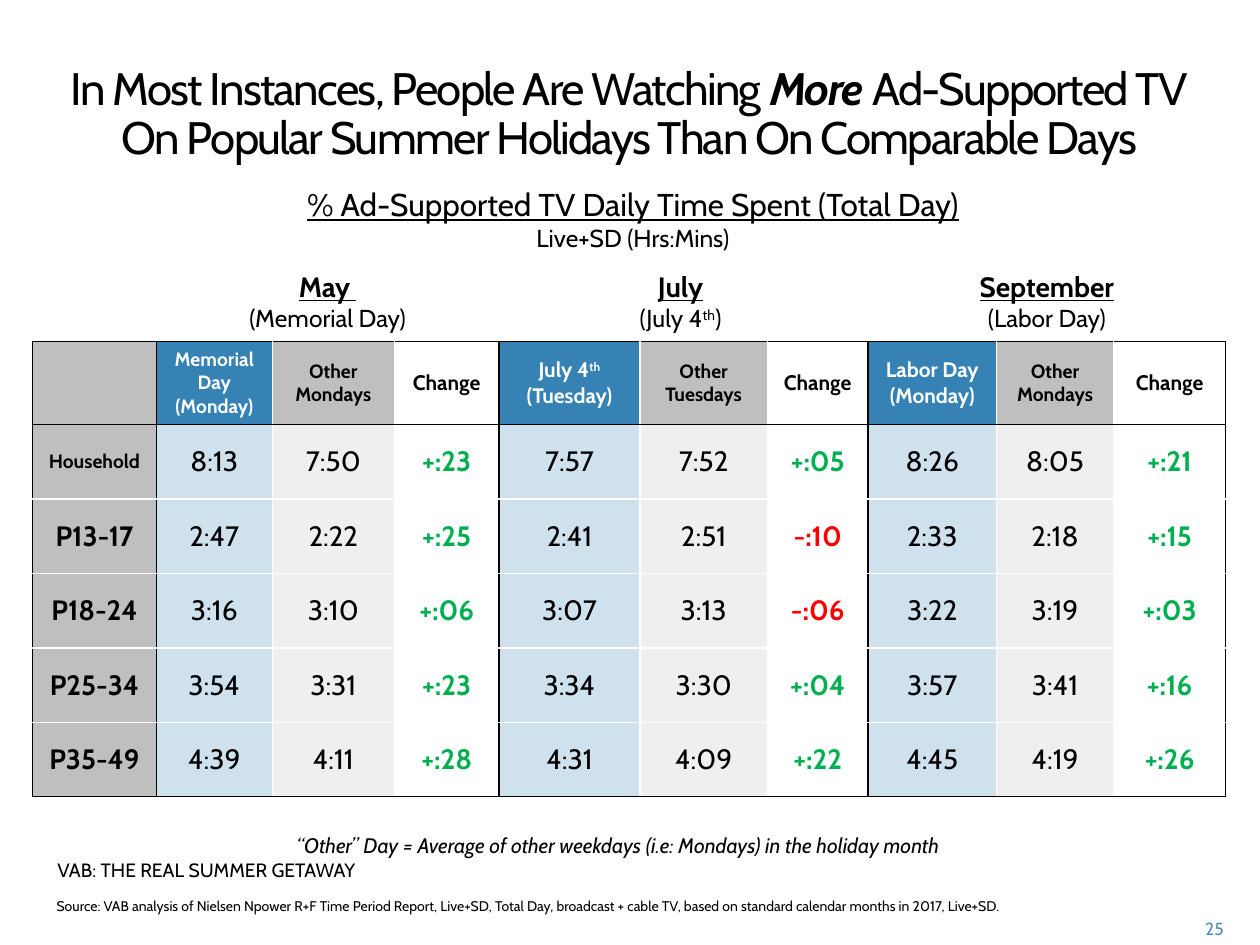
from dataclasses import dataclass

from lxml import etree
from pptx import Presentation
from pptx import util as u
from pptx.dml.color import RGBColor
from pptx.enum import text as t
from pptx.oxml.ns import qn

FONT = "Cabin"
BLACK = RGBColor(0x00, 0x00, 0x00)
WHITE = RGBColor(0xFF, 0xFF, 0xFF)
GRAY = RGBColor(0xBF, 0xBF, 0xBF)
BLUE = RGBColor(0x36, 0x82, 0xB4)
PAGE_BLUE = RGBColor(0x50, 0x8A, 0xBA)
GREEN = RGBColor(0x00, 0xB0, 0x50)
RED = RGBColor(0xFF, 0x00, 0x00)
CENTER = t.PP_ALIGN.CENTER
TINT = 24  # opacity of the value columns, percent


@dataclass
class Span:
    text: str
    size: float
    bold: bool = False
    italic: bool = False
    underline: bool = False
    color: RGBColor = BLACK
    raised: bool = False
    spacing: float = 0


@dataclass
class Block:
    left: float
    top: float
    width: float
    height: float
    paras: list[list[Span]]
    align: t.PP_ALIGN = CENTER


def write_para(para, spans: list[Span], align=CENTER) -> None:
    para.alignment = align
    for span in spans:
        for index, line in enumerate(span.text.split("\n")):
            if index:
                para.add_line_break()
            run = para.add_run()
            run.text = line
            font = run.font
            font.name, font.size = FONT, u.Pt(span.size)
            font.bold, font.italic = span.bold, span.italic
            font.underline = span.underline
            font.color.rgb = span.color
            props = run._r.get_or_add_rPr()
            if span.raised:
                props.set("baseline", "30000")
            if span.spacing:
                props.set("spc", str(int(span.spacing * 100)))


def add_block(page, block: Block) -> None:
    box = page.shapes.add_textbox(*map(u.Cm, (block.left, block.top, block.width, block.height)))
    frame = box.text_frame
    frame.word_wrap = True
    for index, spans in enumerate(block.paras):
        para = frame.add_paragraph() if index else frame.paragraphs[0]
        write_para(para, spans, block.align)


def set_borders(cell, colors: dict[str, RGBColor]) -> None:
    props = cell._tc.get_or_add_tcPr()
    for index, (side, color) in enumerate(colors.items()):
        line = etree.Element(qn(f"a:ln{side}"), w=str(u.Pt(1)))
        fill = etree.SubElement(line, qn("a:solidFill"))
        etree.SubElement(fill, qn("a:srgbClr"), val=str(color))
        props.insert(index, line)


def fill_cell(cell, color: RGBColor, opacity: int = 100) -> None:
    cell.fill.solid()
    cell.fill.fore_color.rgb = color
    if opacity < 100:
        clr = cell._tc.tcPr.find(f".//{qn('a:srgbClr')}")
        etree.SubElement(clr, qn("a:alpha"), val=str(opacity * 1000))


# Table content: three holidays, each with holiday, other days and change
HEADERS = [
    [],
    [Span("Memorial Day (Monday)", 11, True, color=WHITE)],
    [Span("Other Mondays", 11, True)],
    [Span("Change", 12, True)],
    [Span("July 4", 12, True, color=WHITE),
     Span("th", 12, True, color=WHITE, raised=True),
     Span(" (Tuesday)", 12, True, color=WHITE)],
    [Span("Other Tuesdays", 11, True)],
    [Span("Change", 12, True)],
    [Span("Labor Day (Monday)", 12, True, color=WHITE)],
    [Span("Other Mondays", 11, True)],
    [Span("Change", 12, True)],
]
VIEWING = [
    ("Household", "8:13", "7:50", "+:23", "7:57", "7:52", "+:05", "8:26", "8:05", "+:21"),
    ("P13-17", "2:47", "2:22", "+:25", "2:41", "2:51", "-:10", "2:33", "2:18", "+:15"),
    ("P18-24", "3:16", "3:10", "+:06", "3:07", "3:13", "-:06", "3:22", "3:19", "+:03"),
    ("P25-34", "3:54", "3:31", "+:23", "3:34", "3:30", "+:04", "3:57", "3:41", "+:16"),
    ("P35-49", "4:39", "4:11", "+:28", "4:31", "4:09", "+:22", "4:45", "4:19", "+:26"),
]
COLUMN_WIDTHS = [2.49, 2.34, 2.46, 2.11, 2.84, 2.57, 2.03, 2.59, 2.36, 2.26]
HEADER_HEIGHT, ROW_HEIGHT = 1.68, 1.5
GROUP_FILLS = [WHITE, BLUE, GRAY]  # by column number modulo 3


def value_span(value: str, col: int) -> Span:
    if col == 0:
        return Span(value, 11 if value == "Household" else 16, True)
    if col % 3 == 0:
        return Span(value, 16, True, color=RED if value.startswith("-") else GREEN)
    return Span(value, 16)


def add_viewing_table(page) -> None:
    rows = [HEADERS] + [[[value_span(value, col)] for col, value in enumerate(row)]
                        for row in VIEWING]
    last = len(rows) - 1
    height = HEADER_HEIGHT + last * ROW_HEIGHT
    table = page.shapes.add_table(len(rows), len(COLUMN_WIDTHS), u.Cm(0.66), u.Cm(6.88),
                                  u.Cm(sum(COLUMN_WIDTHS)), u.Cm(height)).table
    table.first_row = table.horz_banding = False
    for column, width in zip(table.columns, COLUMN_WIDTHS):
        column.width = u.Cm(width)
    for r, row in enumerate(rows):
        table.rows[r].height = u.Cm(ROW_HEIGHT if r else HEADER_HEIGHT)
        for c, spans in enumerate(row):
            cell = table.cell(r, c)
            cell.vertical_anchor = t.MSO_ANCHOR.MIDDLE
            write_para(cell.text_frame.paragraphs[0], spans)
            tinted = r > 0 and c % 3 != 0
            fill_cell(cell, GROUP_FILLS[c % 3] if c else GRAY, TINT if tinted else 100)
            black_sides = {"L": c == 0 or c % 3 == 1, "R": c % 3 == 0,
                           "T": r <= 1, "B": r in (0, last)}
            set_borders(cell, {side: BLACK if black else WHITE
                               for side, black in black_sides.items()})


def add_title(page) -> None:
    title = page.shapes.title
    title.left, title.top, title.width, title.height = map(u.Cm, (0.46, 1.07, 24.46, 2.46))
    title.text_frame.vertical_anchor = t.MSO_ANCHOR.MIDDLE
    para = title.text_frame.paragraphs[0]
    para.line_spacing = u.Pt(28)
    write_para(para, [
        Span("In Most Instances, People Are Watching ", 26, spacing=-1),
        Span("More", 26, bold=True, italic=True, spacing=-1),
        Span(" Ad-Supported TV\nOn Popular Summer Holidays Than On Comparable Days", 26, spacing=-1),
    ])


def month(name: str) -> list[Span]:
    return [Span(name, 16, bold=True, underline=True)]


BLOCKS = [
    # Subtitle and month headings
    Block(0.76, 3.61, 24, 1.63, [
        [Span("% Ad-Supported TV Daily Time Spent (Total Day)", 18, underline=True)],
        [Span("Live+SD (Hrs:Mins)", 14)]]),
    Block(3.2, 5.31, 6.81, 1.55, [month("May "), [Span("(Memorial Day)", 14)]]),
    Block(10.01, 5.31, 7.42, 1.55, [
        month("July"),
        [Span("(July 4", 14), Span("th", 14, raised=True), Span(")", 14)]]),
    Block(17.5, 5.31, 7.21, 1.55, [month("September"), [Span("(Labor Day)", 14)]]),
    # Notes below the table
    Block(0.46, 16.66, 24, 0.76, [
        [Span("“Other” Day = Average of other weekdays (i.e: Mondays) in the holiday month",
              12, italic=True)]]),
    Block(0.91, 17.17, 6.8, 1.19, [[Span("VAB: THE REAL SUMMER GETAWAY", 11)]],
          t.PP_ALIGN.LEFT),
    Block(0.89, 17.96, 20.32, 0.66, [
        [Span("Source: VAB analysis of Nielsen Npower R+F Time Period Report, Live+SD, "
              "Total Day, broadcast + cable TV, based on standard calendar months in 2017, "
              "Live+SD.", 8)]], t.PP_ALIGN.LEFT),
    Block(23.37, 18.39, 1.55, 0.64, [[Span("25", 10, color=PAGE_BLUE)]], t.PP_ALIGN.RIGHT),
]


def main() -> None:
    deck = Presentation()
    deck.slide_width, deck.slide_height = u.Cm(25.4), u.Cm(19.05)
    page = deck.slides.add_slide(deck.slide_layouts[5])
    add_title(page)
    add_viewing_table(page)
    for block in BLOCKS:
        add_block(page, block)
    deck.save("out.pptx")


if __name__ == "__main__":
    main()
